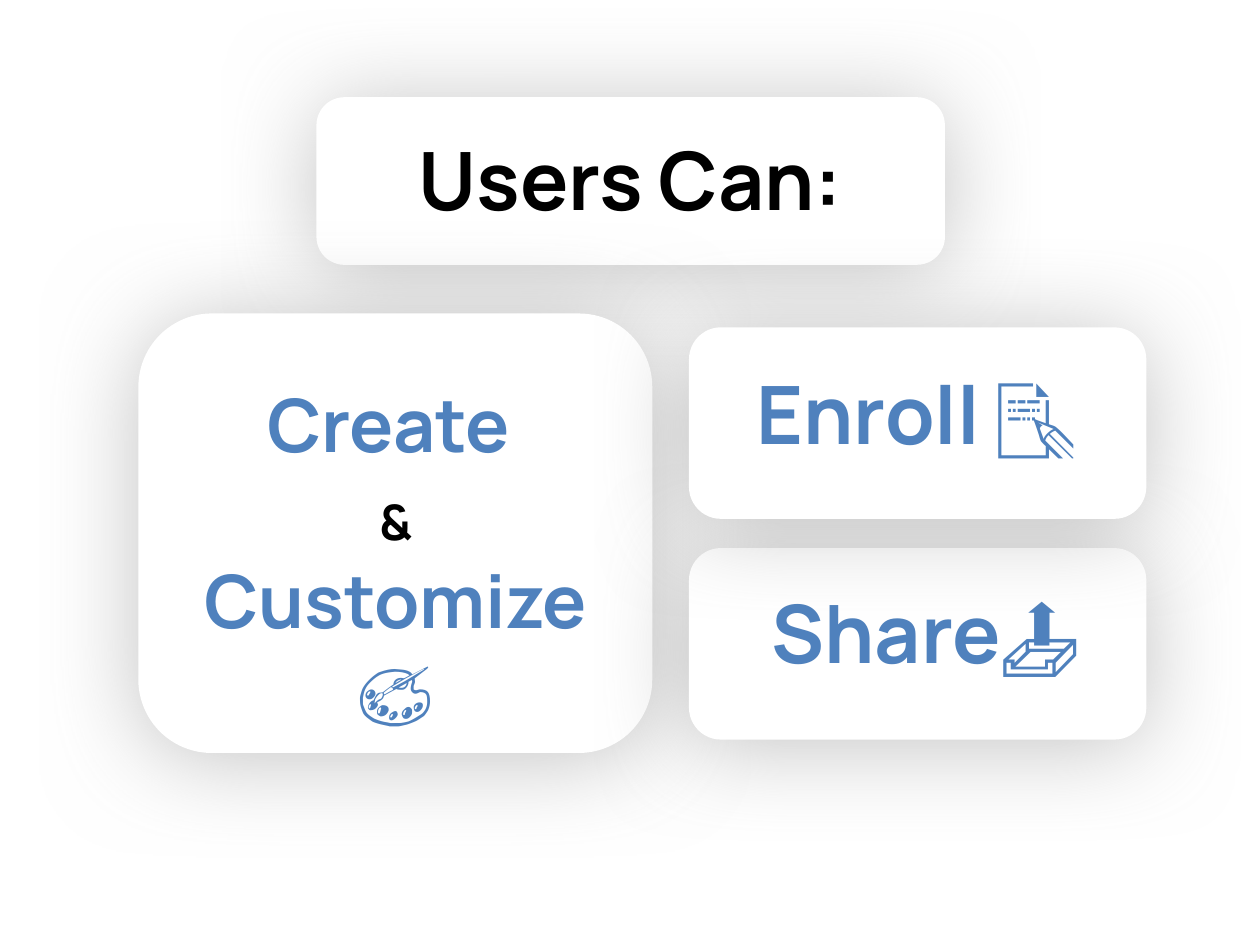
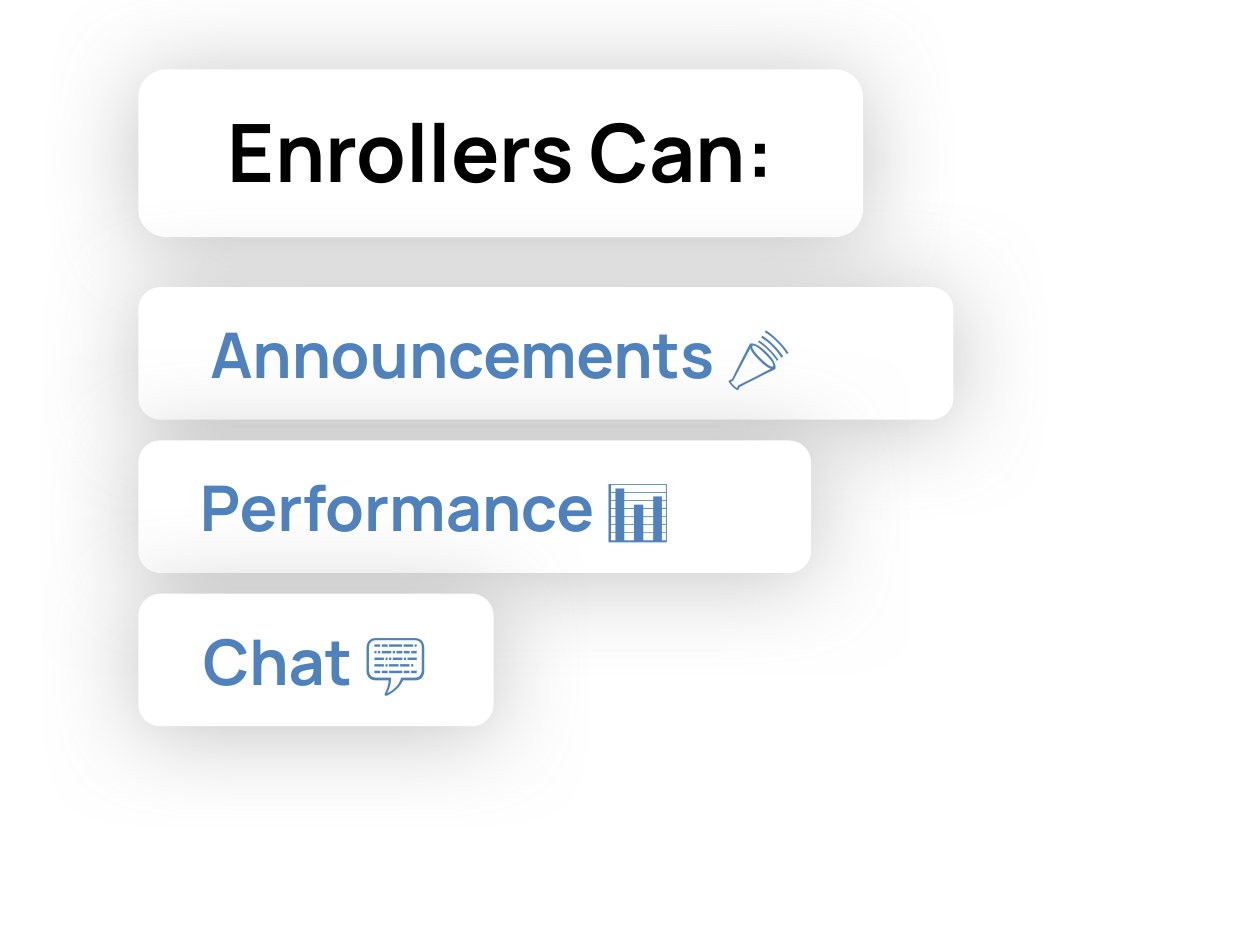
from dataclasses import dataclass

from lxml import etree
from pptx import Presentation
from pptx.dml.color import RGBColor
from pptx.enum.shapes import MSO_SHAPE
from pptx.enum.text import MSO_ANCHOR, MSO_AUTO_SIZE, PP_ALIGN
from pptx.oxml.ns import qn
from pptx.presentation import Presentation as Deck
from pptx.shapes.base import BaseShape
from pptx.slide import Slide
from pptx.util import Cm, Pt

ROUNDED = MSO_SHAPE.ROUNDED_RECTANGLE
TOP = MSO_ANCHOR.TOP
NO_FIT = MSO_AUTO_SIZE.NONE
LEFT, CENTER = PP_ALIGN.LEFT, PP_ALIGN.CENTER

COLORS = {"card": "FFFFFF", "shadow": "888888", "title": "000000", "accent": "4F81BD"}
FONT = "Manrope"
CORNER = 0.167
MARGIN = 0.25
TITLE_ONLY = 5


@dataclass(frozen=True)
class Area:
    """A rectangle in centimetres."""
    left: float
    top: float
    width: float
    height: float


@dataclass(frozen=True)
class Span:
    text: str
    size: int
    color: str = "accent"


@dataclass(frozen=True)
class Card:
    frame: Area
    label: Area
    paragraphs: tuple[tuple[Span, ...], ...]
    align: PP_ALIGN = CENTER


# Shared drawing
def place(shape: BaseShape, area: Area) -> None:
    shape.left, shape.top = Cm(area.left), Cm(area.top)
    shape.width, shape.height = Cm(area.width), Cm(area.height)


def add_soft_shadow(shape: BaseShape) -> None:
    shape.shadow.inherit = False
    effects = shape._element.spPr.find(qn("a:effectLst"))
    shadow = etree.SubElement(
        effects, qn("a:outerShdw"), blurRad=str(Pt(56.2)), dist=str(Pt(3.8)),
        dir=str(90 * 60000), algn="ctr", rotWithShape="0")
    color = etree.SubElement(shadow, qn("a:srgbClr"), val=COLORS["shadow"])
    etree.SubElement(color, qn("a:alpha"), val="50000")


def add_panel(page: Slide, area: Area) -> None:
    panel = page.shapes.add_shape(ROUNDED, 0, 0, 0, 0)
    place(panel, area)
    panel.adjustments[0] = CORNER
    panel.fill.solid()
    panel.fill.fore_color.rgb = RGBColor.from_string(COLORS["card"])
    panel.line.fill.background()
    add_soft_shadow(panel)


def write(box: BaseShape, card: Card) -> None:
    place(box, card.label)
    frame = box.text_frame
    frame.word_wrap = True
    frame.auto_size = NO_FIT
    frame.vertical_anchor = TOP
    frame.margin_left = frame.margin_right = Cm(MARGIN)
    frame.margin_top = frame.margin_bottom = Cm(MARGIN)
    for number, spans in enumerate(card.paragraphs):
        para = frame.add_paragraph() if number else frame.paragraphs[0]
        para.alignment = card.align
        for span in spans:
            run = para.add_run()
            run.text = span.text
            run.font.name = FONT
            run.font.size = Pt(span.size)
            run.font.bold = True
            run.font.color.rgb = RGBColor.from_string(COLORS[span.color])


def add_card(page: Slide, card: Card) -> None:
    add_panel(page, card.frame)
    write(page.shapes.add_textbox(0, 0, 0, 0), card)


def add_title(page: Slide, text: str, left: float, top: float, width: float) -> None:
    frame = Area(left, top, width, 3.38)
    side = 0.073 * width
    label = Area(left + side, top + 0.41, width - 2 * side, 2.57)
    add_panel(page, frame)
    title = page.shapes.title
    write(title, Card(frame, label, ((Span(text, 46, "title"),),)))
    page.shapes._spTree.append(title._element)  # bring the title above its panel


def add_page(deck: Deck) -> Slide:
    return deck.slides.add_slide(deck.slide_layouts[TITLE_ONLY])


# What users can do
def add_users_page(deck: Deck) -> None:
    page = add_page(deck)
    add_title(page, "Users Can:", 6.38, 1.96, 12.67)
    add_card(page, Card(
        Area(2.79, 6.32, 10.36, 8.86), Area(3.56, 7.39, 8.84, 6.73),
        ((Span("Create ", 42),),
         (Span("&", 28, "title"), Span(" ", 42, "title"), Span("Customize", 42)),
         (Span("🎨", 42),))))
    for text, top, label_left, label_top in (
            ("Share📤", 11.05, 14.73, 11.51), ("Enroll 📝", 6.6, 14.55, 7.09)):
        add_card(page, Card(
            Area(13.89, top, 9.22, 3.86), Area(label_left, label_top, 7.87, 2.95),
            ((Span(text, 46),),)))


# What enrollers can do
def add_enrollers_page(deck: Deck) -> None:
    page = add_page(deck)
    left, first_top, step = 2.79, 5.79, 3.09
    add_title(page, "Enrollers Can:", left, 1.4, 14.61)
    features = (
        ("Announcements 📣", 16.43, 3.99, 14.02),
        ("Performance 📊", 13.56, 3.78, 11.56),
        ("Chat 💬", 7.16, 3.84, 6.12),
    )
    for row, (text, width, label_left, label_width) in enumerate(features):
        top = first_top + row * step
        add_card(page, Card(
            Area(left, top, width, 2.67), Area(label_left, top + 0.32, label_width, 2.03),
            ((Span(text, 36),),), LEFT))


def main() -> None:
    deck = Presentation()
    deck.slide_width, deck.slide_height = Cm(25.4), Cm(19.05)
    add_users_page(deck)
    add_enrollers_page(deck)
    deck.save("out.pptx")


if __name__ == "__main__":
    main()
